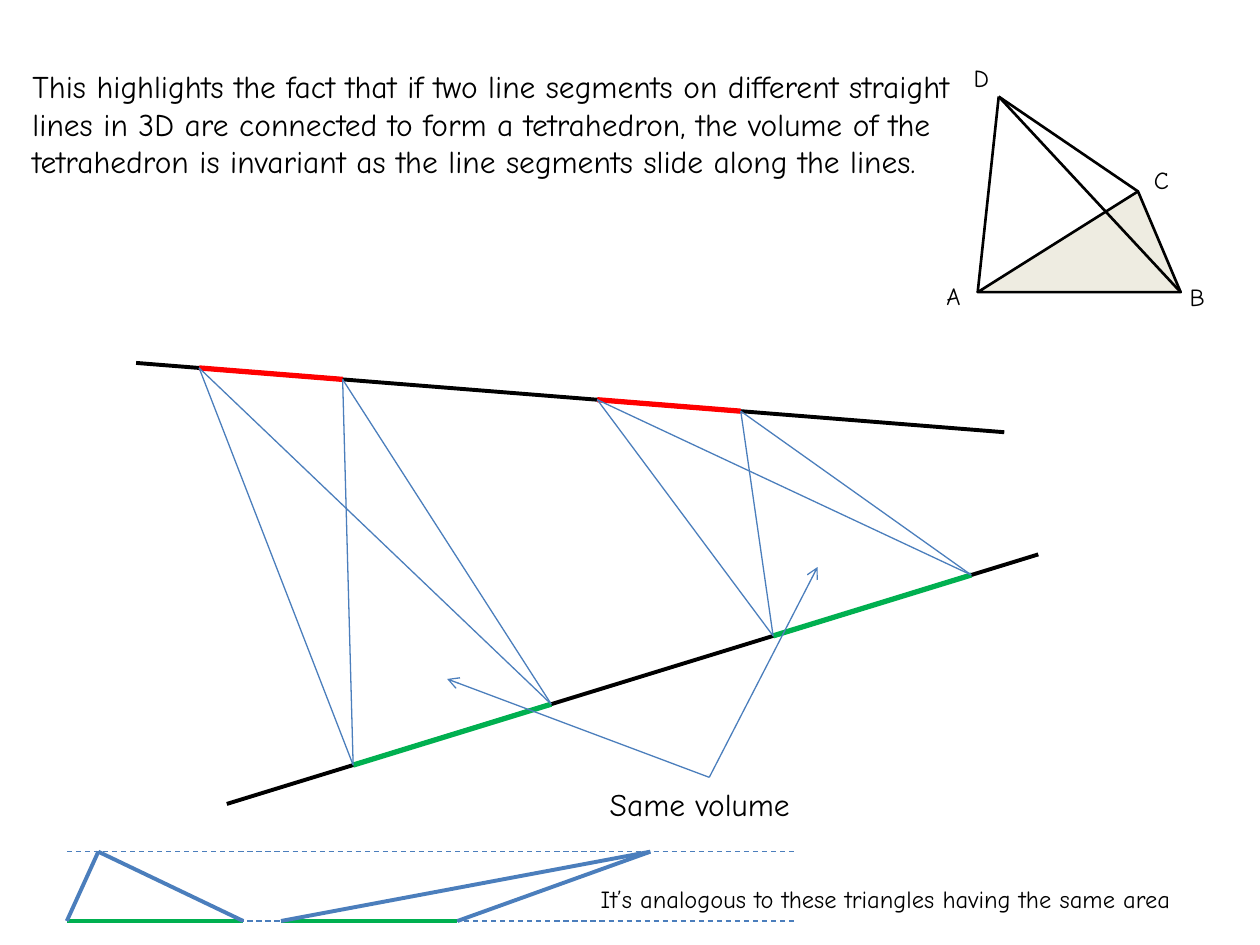
from pptx import Presentation
from pptx.dml.color import RGBColor
from pptx.enum.dml import MSO_LINE
from pptx.enum.shapes import MSO_CONNECTOR, MSO_SHAPE
from pptx.enum.text import MSO_AUTO_SIZE
from pptx.oxml.ns import qn
from pptx.util import Pt
from lxml import etree

STRAIGHT = MSO_CONNECTOR.STRAIGHT
TRIANGLE = MSO_SHAPE.ISOSCELES_TRIANGLE
DASH = MSO_LINE.DASH
GROW = MSO_AUTO_SIZE.SHAPE_TO_FIT_TEXT

FONT = "Comic Neue"
BLACK, RED, GREEN, BLUE, CREAM = "000000", "FF0000", "00B050", "4B7EBC", "EEECE1"


def color(hex_text):
    return RGBColor.from_string(hex_text)


def add_text(s, box, text, size, wrap=False):
    tb = s.shapes.add_textbox(*[Pt(v) for v in box])
    tf = tb.text_frame
    tf.word_wrap = wrap
    tf.auto_size = GROW
    r = tf.paragraphs[0].add_run()
    r.text = text
    r.font.name = FONT
    r.font.size = Pt(size)
    r.font.color.rgb = color(BLACK)


def add_line(s, start, end, hex_text, width, dash=None, arrow=False):
    c = s.shapes.add_connector(STRAIGHT, *[Pt(v) for v in (*start, *end)])
    c.line.color.rgb = color(hex_text)
    c.line.width = Pt(width)
    if dash:
        c.line.dash_style = dash
    if arrow:
        ln = c.line._get_or_add_ln()
        etree.SubElement(ln, qn("a:tailEnd"), type="arrow")
    etree.SubElement(c._element.spPr, qn("a:effectLst"))


def add_tetrahedron(s, x, y, w, h):
    base_h = 57.6
    peak = 0.79
    a, b = (x, y + h), (x + w, y + h)
    c = (x + peak * w, y + h - base_h)
    d = (x + 12, y)

    # Shaded base ABC
    sp = s.shapes.add_shape(TRIANGLE, Pt(x), Pt(c[1]), Pt(w), Pt(base_h))
    sp.adjustments[0] = peak
    sp.shadow.inherit = False
    sp.fill.solid()
    sp.fill.fore_color.rgb = color(CREAM)
    sp.line.color.rgb = color(BLACK)
    sp.line.width = Pt(1.5)

    # Edges from the base to D
    for corner in (a, b, c):
        add_line(s, corner, d, BLACK, 1.5)

    # Corner names, offset from their corners
    for name, (px, py), dx, dy in (("A", a, -25, -10), ("B", b, -2, -9.5),
                                   ("C", c, 2, -18.7), ("D", d, -21.5, -22.5)):
        add_text(s, (px + dx, py + dy, 24, 27), name, 14)


def point_at(start, end, px):
    """Point of the line from start to end whose horizontal position is px."""
    (x1, y1), (x2, y2) = start, end
    return px, y1 + (y2 - y1) * (px - x1) / (x2 - x1)


def add_sliding_segments(s, x, y, w, h):
    top = (x, y), (x + 496.1, y + 39.6)
    bottom = (x + 51.8, y + h), (x + w, y + 109.4)
    red_length, green_length = 82, 113.2

    # The two straight lines
    for track in (top, bottom):
        add_line(s, *track, BLACK, 2.25)

    # Each tetrahedron: a red segment, a green segment and four joining edges
    for red_x, green_x in ((36, 124), (263.5, 364)):
        red = [point_at(*top, x + red_x + d) for d in (0, red_length)]
        green = [point_at(*bottom, x + green_x + d) for d in (0, green_length)]
        add_line(s, *red, RED, 3)
        add_line(s, *green, GREEN, 3)
        for upper in red:
            for lower in green:
                add_line(s, upper, lower, BLUE, 0.75)


def add_volume_note(s, x, y, w, h):
    add_text(s, (x, y, w, h), "Same volume", 18)
    start = (x + 64, y - 0.8)
    # Arrows to the two tetrahedra
    for dx, dy in ((-149.8, -56.2), (61.9, -120.2)):
        add_line(s, start, (start[0] + dx, start[1] + dy), BLUE, 0.75, arrow=True)


def add_equal_triangles(s, x, y, w, h):
    base = 100.8
    # Parallel guides
    for guide_y in (y + h, y):
        add_line(s, (x, guide_y), (x + w, guide_y), BLUE, 0.75, dash=DASH)
    # Triangles with equal base and height
    for left, apex_x in ((0, 18), (122.4, 333.4)):
        ends = [(x + left + d, y + h) for d in (0, base)]
        add_line(s, *ends, GREEN, 2.25)
        for end in ends:
            add_line(s, end, (x + apex_x, y), BLUE, 2.25)
    add_text(s, (x + 298, y + 15, 376.6, 24.5),
             "It’s analogous to these triangles having the same area", 14)


def main():
    prs = Presentation()
    prs.slide_width, prs.slide_height = Pt(720), Pt(540)
    s = prs.slides.add_slide(prs.slide_layouts[6])

    add_tetrahedron(s, 558.7, 55.2, 116, 111.8)
    add_text(s, (11.5, 34.6, 547.2, 138.2),
             "This highlights the fact that if two line segments on different "
             "straight lines in 3D are connected to form a tetrahedron, the "
             "volume of the tetrahedron is invariant as the line segments "
             "slide along the lines.", 18, wrap=True)
    add_sliding_segments(s, 77.8, 207.4, 515.5, 252)
    add_volume_note(s, 341.3, 445, 123.1, 28.8)
    add_equal_triangles(s, 38.2, 486.7, 417.6, 39.6)

    prs.save("out.pptx")


if __name__ == "__main__":
    main()
